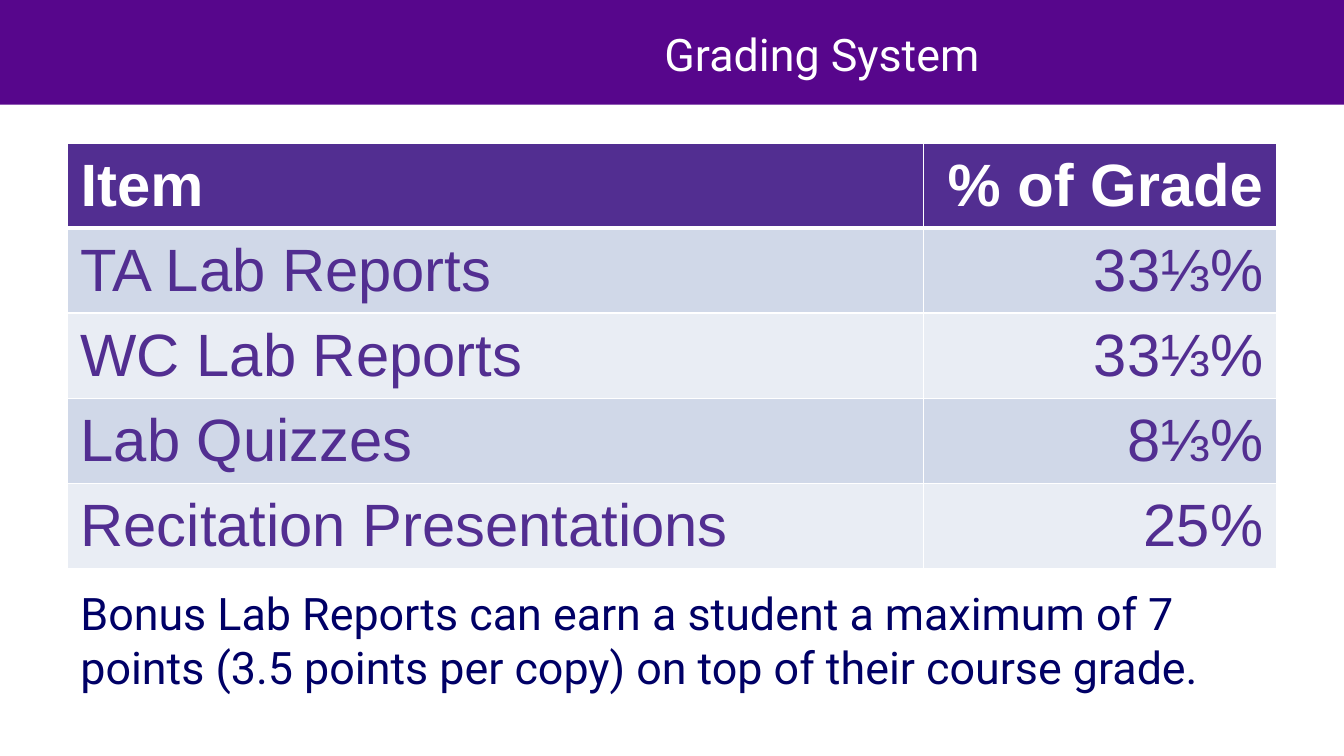
from lxml.etree import SubElement
from pptx import Presentation
from pptx.dml.color import RGBColor
from pptx.enum.shapes import MSO_SHAPE
from pptx.enum.text import MSO_ANCHOR, PP_ALIGN
from pptx.oxml.ns import qn
from pptx.util import Cm, Pt

COLORS = {
    "band": "57068C",
    "header": "522E91",
    "odd_row": "D0D8E8",
    "even_row": "E9EDF4",
    "white": "FFFFFF",
    "note": "000066",
}
GRADES = [
    ("Item", "% of Grade"),
    ("TA Lab Reports", "33⅓%"),
    ("WC Lab Reports", "33⅓%"),
    ("Lab Quizzes", "8⅓%"),
    ("Recitation Presentations", "25%"),
]


def color(name):
    """Return the palette colour with this name."""
    return RGBColor.from_string(COLORS[name])


def write(frame, text, font_name, size, ink, align=PP_ALIGN.LEFT, bold=False):
    """Fill a text frame with one formatted paragraph."""
    frame.text = text
    paragraph = frame.paragraphs[0]
    paragraph.alignment = align
    for run in paragraph.runs:
        run.font.name = font_name
        run.font.size = Pt(size)
        run.font.bold = bold
        run.font.color.rgb = color(ink)


def set_borders(cell, bottom_width):
    """Draw white borders around a table cell."""
    properties = cell._tc.get_or_add_tcPr()
    widths = {"a:lnL": 1, "a:lnR": 1, "a:lnT": 1, "a:lnB": bottom_width}
    for position, (tag, width) in enumerate(widths.items()):
        border = properties.makeelement(qn(tag), {"w": str(Pt(width))})
        fill = SubElement(border, qn("a:solidFill"))
        SubElement(fill, qn("a:srgbClr"), val=COLORS["white"])
        properties.insert(position, border)


def add_title_band(slide, left, top, width, height):
    """Place the purple band and its title."""
    band = slide.shapes.add_shape(
        MSO_SHAPE.RECTANGLE, Cm(left), Cm(top), Cm(width), Cm(height))
    band.shadow.inherit = False
    band.fill.solid()
    band.fill.fore_color.rgb = color("band")
    band.line.fill.background()

    title = slide.shapes.add_textbox(
        Cm(left + 6.3), Cm(top + 0.64), Cm(width - 6.93), Cm(0.74))
    frame = title.text_frame
    frame.word_wrap = True
    frame.vertical_anchor = MSO_ANCHOR.MIDDLE
    frame.margin_left = frame.margin_right = 0
    frame.margin_top = frame.margin_bottom = 0
    write(frame, "Grading System", "Roboto", 24, "white", PP_ALIGN.CENTER)


def add_grade_table(slide, left, top, width, height):
    """Place the table of graded items and their shares."""
    grades = slide.shapes.add_table(
        len(GRADES), 2, Cm(left), Cm(top), Cm(width), Cm(height)).table
    share_width = 6.68
    grades.columns[0].width = Cm(width - share_width)
    grades.columns[1].width = Cm(share_width)
    for row, texts in enumerate(GRADES):
        is_header = row == 0
        band = "header" if is_header else "odd_row" if row % 2 else "even_row"
        ink = "white" if is_header else "header"
        for column, text in enumerate(texts):
            cell = grades.cell(row, column)
            cell.vertical_anchor = MSO_ANCHOR.MIDDLE
            cell.fill.solid()
            cell.fill.fore_color.rgb = color(band)
            set_borders(cell, 3 if is_header else 1)
            align = PP_ALIGN.RIGHT if column else PP_ALIGN.LEFT
            write(cell.text_frame, text, "Arial", 32, ink, align, is_header)


def add_bonus_note(slide, left, top, width, height):
    """Place the note on bonus points."""
    note = slide.shapes.add_textbox(Cm(left), Cm(top), Cm(width), Cm(height))
    note.text_frame.word_wrap = True
    write(note.text_frame,
          "Bonus Lab Reports can earn a student a maximum of 7 points "
          "(3.5 points per copy) on top of their course grade.",
          "Roboto", 24, "note")


def main():
    """Build the grading slide and save it."""
    deck = Presentation()
    deck.slide_width, deck.slide_height = Cm(25.4), Cm(14.29)
    slide = deck.slides.add_slide(deck.slide_layouts[6])
    add_title_band(slide, 0, 0, 25.4, 1.98)
    add_grade_table(slide, 1.27, 2.7, 22.86, 8.05)
    add_bonus_note(slide, 1.27, 10.95, 22.86, 3.33)
    deck.save("out.pptx")


if __name__ == "__main__":
    main()
